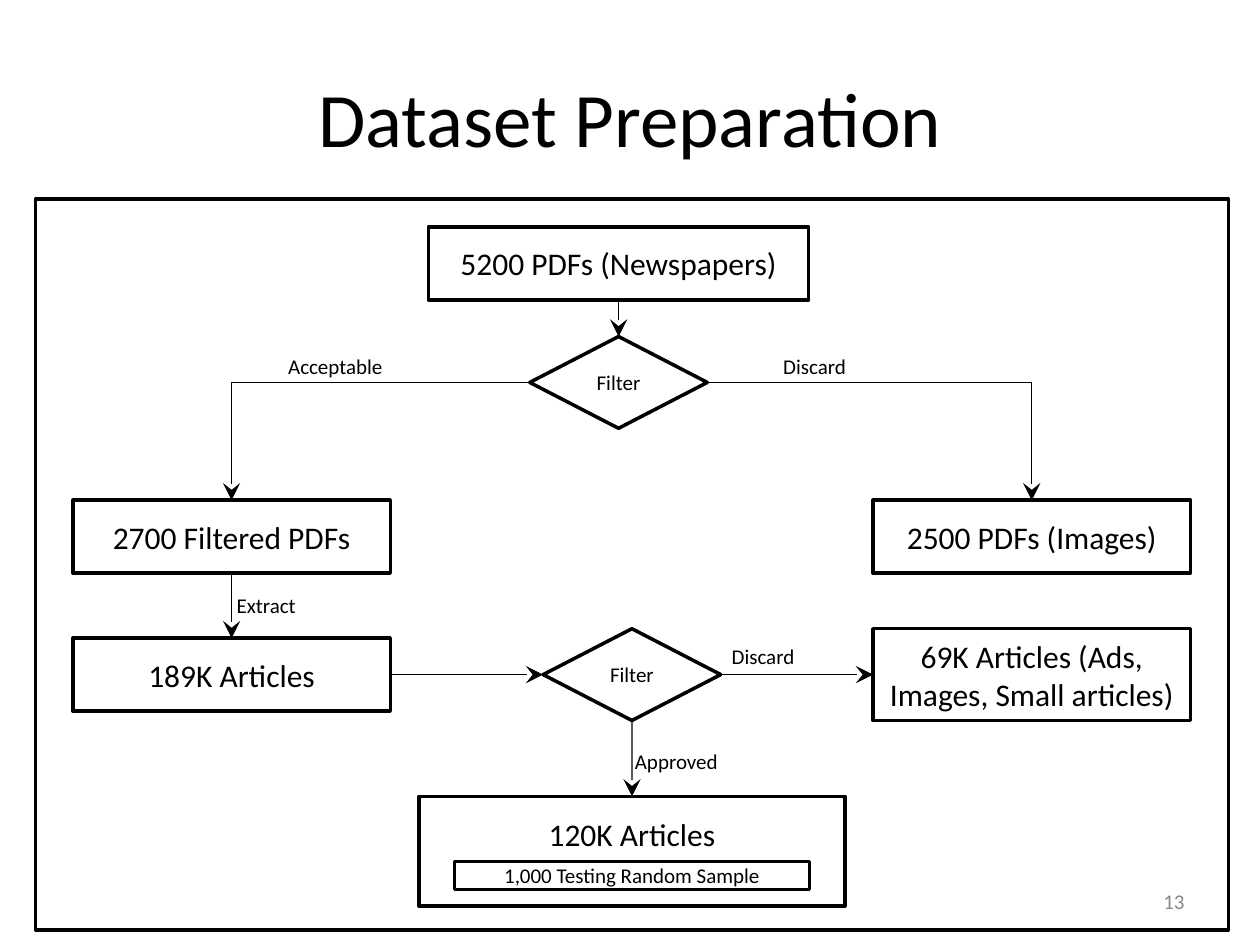
from pptx import Presentation
from pptx.dml.color import RGBColor
from pptx.enum.shapes import MSO_CONNECTOR, MSO_SHAPE
from pptx.enum.text import MSO_ANCHOR, PP_ALIGN
from pptx.oxml.ns import qn
from pptx.util import Cm, Pt
from lxml.etree import SubElement

TITLE = "Dataset Preparation"
PAGE_NUMBER = "13"

# Centre lines of the flow chart, in cm
COLUMNS = {"left": 4.67, "top": 12.47, "middle": 12.74, "right": 20.8}
ROWS = {"frame": 11.38, "source": 5.31, "screen": 7.71, "pdfs": 10.82,
        "articles": 13.6, "result": 17.16, "sample": 17.65}
# Width and height in cm
SIZES = {"frame": (24.05, 14.73), "source": (7.67, 1.47), "step": (6.4, 1.47),
         "tall": (6.4, 1.85), "filter": (3.58, 1.85), "result": (8.59, 2.21),
         "sample": (7.16, 0.56)}

# key: (text, column, row, size, type size)
NODES = {
    "frame": ("", "middle", "frame", "frame", "node"),
    "newspapers": ("5200 PDFs (Newspapers)", "top", "source", "source", "node"),
    "pdf filter": ("Filter", "top", "screen", "filter", "label"),
    "filtered": ("2700 Filtered PDFs", "left", "pdfs", "step", "node"),
    "images": ("2500 PDFs (Images)", "right", "pdfs", "step", "node"),
    "articles": ("189K Articles", "left", "articles", "step", "node"),
    "article filter": ("Filter", "middle", "articles", "filter", "label"),
    "rejected": ("69K Articles (Ads, Images, Small articles)",
                 "right", "articles", "tall", "node"),
    "approved": ("", "middle", "result", "result", "node"),
    "sample": ("1,000 Testing Random Sample", "middle", "sample", "sample", "label"),
}

# (from, side, to, side)
FLOWS = [
    ("newspapers", "bottom", "pdf filter", "top"),
    ("pdf filter", "left", "filtered", "top"),
    ("pdf filter", "right", "images", "top"),
    ("filtered", "bottom", "articles", "top"),
    ("articles", "right", "article filter", "left"),
    ("article filter", "right", "rejected", "left"),
    ("article filter", "bottom", "approved", "top"),
]
SITES = {"top": 0, "left": 1, "bottom": 2, "right": 3}
OPPOSITE = {("bottom", "top"), ("right", "left")}

# (text, (left, top, width, height) in cm, format)
LABELS = [
    ("120K Articles", (9.16, 16.31, 7.16, 0.89), "heading"),
    ("Discard", (15.54, 6.99, 5.38, 0.81), "label"),
    ("Acceptable", (5.56, 6.99, 4.09, 0.66), "label"),
    ("Extract", (4.52, 11.81, 2.08, 0.66), "label"),
    ("Discard", (14.5, 12.85, 5.38, 0.66), "label"),
    ("Approved", (12.55, 14.96, 5.38, 0.66), "label"),
    (PAGE_NUMBER, (18.21, 17.65, 5.92, 1.02), "page"),
]

INK, PAPER, GREY = (RGBColor.from_string(c) for c in ("000000", "FFFFFF", "888888"))
THEME = {
    "font": "Calibri", "border": Pt(2), "arrow": Pt(0.75),
    # size, colour, alignment, anchor
    "title": (Pt(44), INK, PP_ALIGN.CENTER, MSO_ANCHOR.MIDDLE),
    "node": (Pt(18), INK, PP_ALIGN.CENTER, MSO_ANCHOR.MIDDLE),
    "heading": (Pt(18), INK, PP_ALIGN.CENTER, MSO_ANCHOR.TOP),
    "label": (Pt(12), INK, PP_ALIGN.LEFT, MSO_ANCHOR.TOP),
    "page": (Pt(12), GREY, PP_ALIGN.RIGHT, MSO_ANCHOR.MIDDLE),
}


def set_all(target, values):
    for name, value in values.items():
        setattr(target, name, value)


def write(shape, wording, style, **overrides):
    size, colour, alignment, anchor = THEME[style]
    frame = shape.text_frame
    set_all(frame, {"text": wording, "word_wrap": True, "vertical_anchor": anchor,
                    "margin_left": Cm(0.25), "margin_right": Cm(0.25),
                    "margin_top": Cm(0.13), "margin_bottom": Cm(0.13), **overrides})
    paragraph = frame.paragraphs[0]
    paragraph.alignment = alignment
    set_all(paragraph.font, {"name": THEME["font"], "size": size})
    paragraph.font.color.rgb = colour


def add_node(slide, wording, column, row, size, style):
    width, height = SIZES[size]
    kind = MSO_SHAPE.DIAMOND if size == "filter" else MSO_SHAPE.RECTANGLE
    node = slide.shapes.add_shape(
        kind, Cm(COLUMNS[column] - width / 2), Cm(ROWS[row] - height / 2),
        Cm(width), Cm(height))
    node.shadow.inherit = False
    node.fill.solid()
    node.fill.fore_color.rgb = PAPER
    node.line.color.rgb = INK
    node.line.width = THEME["border"]
    if wording:
        write(node, wording, style, vertical_anchor=MSO_ANCHOR.MIDDLE)
        node.text_frame.paragraphs[0].alignment = PP_ALIGN.CENTER
    return node


def add_flow(slide, source, source_side, target, target_side):
    """Glue an arrow to two nodes, with one corner where the sides do not face."""
    straight = (source_side, target_side) in OPPOSITE
    kind = MSO_CONNECTOR.STRAIGHT if straight else MSO_CONNECTOR.ELBOW
    arrow = slide.shapes.add_connector(kind, 0, 0, 0, 0)
    arrow.begin_connect(source, SITES[source_side])
    arrow.end_connect(target, SITES[target_side])
    arrow.line.color.rgb = INK
    arrow.line.width = THEME["arrow"]
    properties = arrow.element.spPr
    if not straight:
        properties.find(qn("a:prstGeom")).set("prst", "bentConnector2")
    SubElement(properties.find(qn("a:ln")), qn("a:tailEnd"),
               type="stealth", w="lg", len="lg")
    SubElement(properties, qn("a:effectLst"))


def main():
    deck = Presentation()
    set_all(deck, {"slide_width": Cm(25.4), "slide_height": Cm(19.05)})
    slide = deck.slides.add_slide(deck.slide_layouts[5])

    title = slide.shapes.title
    set_all(title, {"left": Cm(1.27), "top": Cm(0.76),
                    "width": Cm(22.86), "height": Cm(3.18)})
    write(title, TITLE, "title")

    nodes = {key: add_node(slide, *node) for key, node in NODES.items()}
    for source, source_side, target, target_side in FLOWS:
        add_flow(slide, nodes[source], source_side, nodes[target], target_side)
    for wording, place, style in LABELS:
        write(slide.shapes.add_textbox(*map(Cm, place)), wording, style)

    deck.save("out.pptx")


if __name__ == "__main__":
    main()
